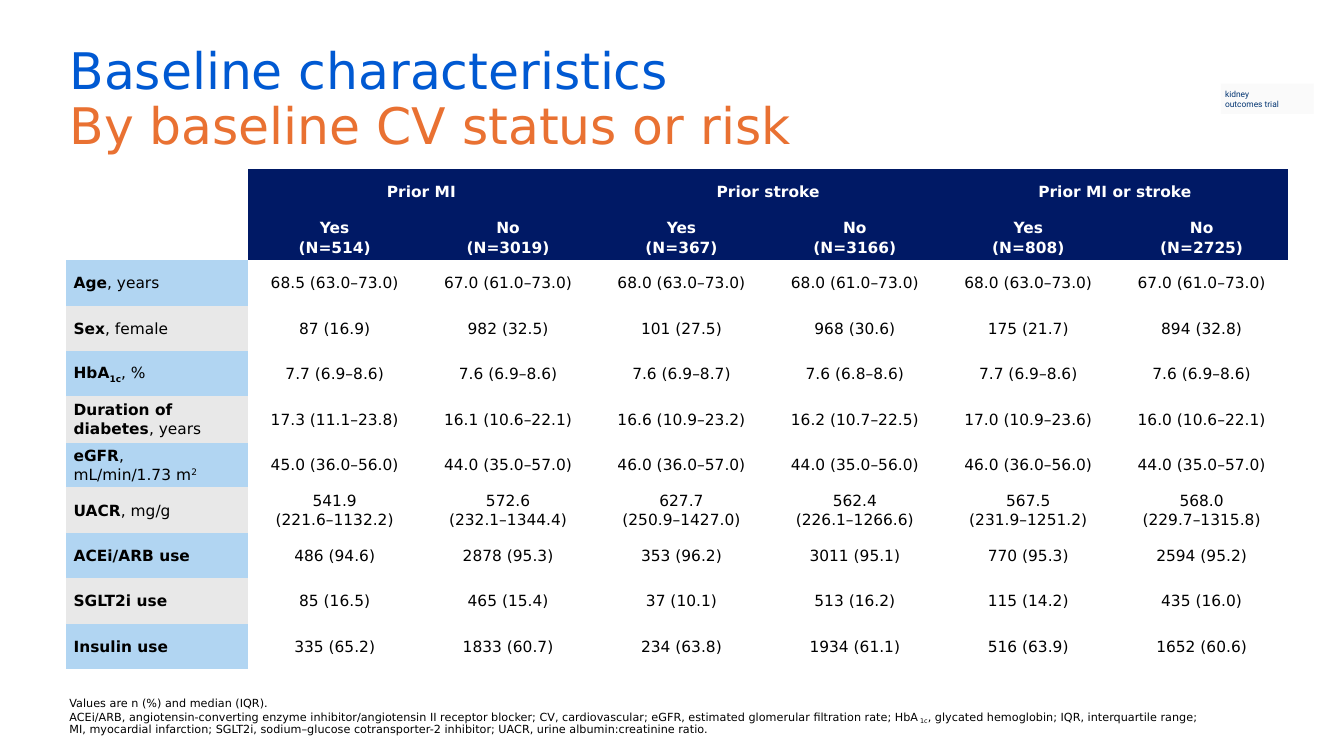
from dataclasses import dataclass

from lxml import etree
from pptx import Presentation
from pptx.dml.color import RGBColor
from pptx.enum.shapes import MSO_SHAPE
from pptx.enum.text import MSO_ANCHOR, PP_ALIGN
from pptx.oxml.ns import qn
from pptx.util import Inches, Pt

LEFT, CENTER = PP_ALIGN.LEFT, PP_ALIGN.CENTER
MIDDLE, BOTTOM = MSO_ANCHOR.MIDDLE, MSO_ANCHOR.BOTTOM
RECTANGLE = MSO_SHAPE.RECTANGLE
NO_GRID_STYLE = "{2D5ABB26-0587-4C30-8999-92F81FD0307C}"


@dataclass(frozen=True)
class Theme:
    font: str = "DejaVu Sans"
    badge_font: str = "Roboto"
    title_size: int = 36
    table_size: int = 11
    note_size: int = 8
    badge_size: int = 6
    blue: str = "0059D2"
    orange: str = "E97132"
    navy: str = "001965"
    light_blue: str = "B1D5F2"
    grey: str = "E8E8E8"
    badge_fill: str = "FAFAFA"
    badge_text: str = "033572"
    black: str = "000000"
    white: str = "FFFFFF"


THEME = Theme()
BOLD = {"bold": True}
SUBSCRIPT = {"baseline": -25}
SUPERSCRIPT = {"baseline": 30}

GROUPS = ["Prior MI", "Prior stroke", "Prior MI or stroke"]
ARMS = ["Yes\n(N=514)", "No\n(N=3019)", "Yes\n(N=367)",
        "No\n(N=3166)", "Yes\n(N=808)", "No\n(N=2725)"]
CHARACTERISTICS = [
    ([("Age", BOLD), (", years", {})],
     ["68.5 (63.0–73.0)", "67.0 (61.0–73.0)", "68.0 (63.0–73.0)",
      "68.0 (61.0–73.0)", "68.0 (63.0–73.0)", "67.0 (61.0–73.0)"]),
    ([("Sex", BOLD), (", female", {})],
     ["87 (16.9)", "982 (32.5)", "101 (27.5)",
      "968 (30.6)", "175 (21.7)", "894 (32.8)"]),
    ([("HbA", BOLD), ("1c", BOLD | SUBSCRIPT), (", %", {})],
     ["7.7 (6.9–8.6)", "7.6 (6.9–8.6)", "7.6 (6.9–8.7)",
      "7.6 (6.8–8.6)", "7.7 (6.9–8.6)", "7.6 (6.9–8.6)"]),
    ([("Duration of diabetes", BOLD), (", years", {})],
     ["17.3 (11.1–23.8)", "16.1 (10.6–22.1)", "16.6 (10.9–23.2)",
      "16.2 (10.7–22.5)", "17.0 (10.9–23.6)", "16.0 (10.6–22.1)"]),
    ([("eGFR", BOLD), (",\nmL/min/1.73 m", {}), ("2", SUPERSCRIPT)],
     ["45.0 (36.0–56.0)", "44.0 (35.0–57.0)", "46.0 (36.0–57.0)",
      "44.0 (35.0–56.0)", "46.0 (36.0–56.0)", "44.0 (35.0–57.0)"]),
    ([("UACR", BOLD), (", mg/g", {})],
     ["541.9\n(221.6–1132.2)", "572.6\n(232.1–1344.4)", "627.7\n(250.9–1427.0)",
      "562.4\n(226.1–1266.6)", "567.5\n(231.9–1251.2)", "568.0\n(229.7–1315.8)"]),
    ([("ACEi/ARB use", BOLD)],
     ["486 (94.6)", "2878 (95.3)", "353 (96.2)",
      "3011 (95.1)", "770 (95.3)", "2594 (95.2)"]),
    ([("SGLT2i use", BOLD)],
     ["85 (16.5)", "465 (15.4)", "37 (10.1)",
      "513 (16.2)", "115 (14.2)", "435 (16.0)"]),
    ([("Insulin use", BOLD)],
     ["335 (65.2)", "1833 (60.7)", "234 (63.8)",
      "1934 (61.1)", "516 (63.9)", "1652 (60.6)"]),
]
HEADER_ROWS = 2
FIRST_RULED_ROW = 4

NOTE = [
    ("Values are n (%) and median (IQR).\nACEi/ARB, angiotensin-converting enzyme "
     "inhibitor/angiotensin II receptor blocker; CV, cardiovascular; eGFR, estimated "
     "glomerular filtration rate; HbA", {}),
    ("1c", SUBSCRIPT),
    (", glycated hemoglobin; IQR, interquartile range;\nMI, myocardial infarction; "
     "SGLT2i, sodium–glucose cotransporter-2 inhibitor; UACR, urine "
     "albumin:creatinine ratio.", {}),
]


def set_attributes(target, **values):
    for name, value in values.items():
        setattr(target, name, value)


def write_runs(paragraph, runs, size, color=THEME.black, font=THEME.font):
    """Add (text, style) runs; a newline in the text becomes a line break."""
    for text, style in runs:
        for index, line in enumerate(text.split("\n")):
            if index:
                paragraph.add_line_break()
            if not line:
                continue
            run = paragraph.add_run()
            run.text = line
            set_attributes(run.font, name=font, size=Pt(size),
                           bold=style.get("bold", False))
            run.font.color.rgb = RGBColor.from_string(style.get("color", color))
            if "baseline" in style:
                run.font._element.set("baseline", str(style["baseline"] * 1000))


def add_text(slide, box, runs, size, anchor):
    shape = slide.shapes.add_textbox(*map(Inches, box))
    set_attributes(shape.text_frame, word_wrap=True, vertical_anchor=anchor)
    paragraph = shape.text_frame.paragraphs[0]
    paragraph.line_spacing = 0.9
    write_runs(paragraph, runs, size)


def add_badge(slide, box, lines):
    shape = slide.shapes.add_shape(RECTANGLE, *map(Inches, box))
    shape.shadow.inherit = False
    shape.fill.solid()
    shape.fill.fore_color.rgb = RGBColor.from_string(THEME.badge_fill)
    shape.line.fill.background()
    frame = shape.text_frame
    set_attributes(frame, word_wrap=True, vertical_anchor=MIDDLE,
                   margin_left=Inches(0.04), margin_right=0)
    for index, line in enumerate(lines):
        paragraph = frame.add_paragraph() if index else frame.paragraphs[0]
        paragraph.alignment = LEFT
        write_runs(paragraph, [(line, {})], THEME.badge_size,
                   THEME.badge_text, THEME.badge_font)


def fill_cell(cell, runs, alignment=CENTER, fill=None, color=THEME.black):
    set_attributes(cell, vertical_anchor=MIDDLE, margin_top=0, margin_bottom=0,
                   margin_left=Inches(0.08), margin_right=Inches(0.08))
    if fill:
        cell.fill.solid()
        cell.fill.fore_color.rgb = RGBColor.from_string(fill)
    paragraph = cell.text_frame.paragraphs[0]
    set_attributes(paragraph, alignment=alignment, line_spacing=1.07, space_after=Pt(8))
    write_runs(paragraph, runs, THEME.table_size, color)


def add_cell_rules(cell, edges):
    """Draw thin grey lines on the given edges, listed in schema order."""
    properties = cell._tc.get_or_add_tcPr()
    for position, edge in enumerate(edges):
        line = etree.Element(qn(f"a:{edge}"), w=str(Pt(1)))
        solid = etree.SubElement(line, qn("a:solidFill"))
        etree.SubElement(solid, qn("a:srgbClr"), val=THEME.grey)
        properties.insert(position, line)


def add_baseline_table(slide, box):
    row_count = HEADER_ROWS + len(CHARACTERISTICS)
    frame = slide.shapes.add_table(row_count, 1 + len(ARMS), *map(Inches, box))
    table = frame.table
    set_attributes(table, first_row=False, horz_banding=False)
    table._tbl.tblPr.find(qn("a:tableStyleId")).text = NO_GRID_STYLE
    for index, column in enumerate(table.columns):
        column.width = Inches(1.72 if index else 1.81)
    for row in table.rows:
        row.height = Inches(box[3] / row_count)

    header = {"fill": THEME.navy, "color": THEME.white}
    for index, group in enumerate(GROUPS):
        first = 1 + 2 * index
        table.cell(0, first).merge(table.cell(0, first + 1))
        fill_cell(table.cell(0, first), [(group, BOLD)], **header)
    for column, arm in enumerate(ARMS, 1):
        fill_cell(table.cell(1, column), [(arm, BOLD)], **header)

    for row, (label, values) in enumerate(CHARACTERISTICS, HEADER_ROWS):
        label_cell = table.cell(row, 0)
        fill_cell(label_cell, label, LEFT, THEME.grey if row % 2 else THEME.light_blue)
        edges = ["lnT"] if row > FIRST_RULED_ROW else []
        if FIRST_RULED_ROW <= row < row_count - 1:
            edges.append("lnB")
        add_cell_rules(label_cell, edges)
        for column, value in enumerate(values, 1):
            fill_cell(table.cell(row, column), [(value, {})])


def main():
    presentation = Presentation()
    set_attributes(presentation, slide_width=Inches(13.33), slide_height=Inches(7.5))
    slide = presentation.slides.add_slide(presentation.slide_layouts[6])
    add_badge(slide, (12.11, 0.83, 0.92, 0.3), ["kidney", "outcomes trial"])
    add_text(slide, (0.59, 6.47, 12.16, 0.88), NOTE, THEME.note_size, BOTTOM)
    title = [("Baseline characteristics\n", {"color": THEME.blue}),
             ("By baseline CV status or risk", {"color": THEME.orange})]
    add_text(slide, (0.59, 0.4, 9.59, 1.2), title, THEME.title_size, MIDDLE)
    add_baseline_table(slide, (0.65, 1.68, 12.13, 4.96))
    presentation.save("out.pptx")


if __name__ == "__main__":
    main()
